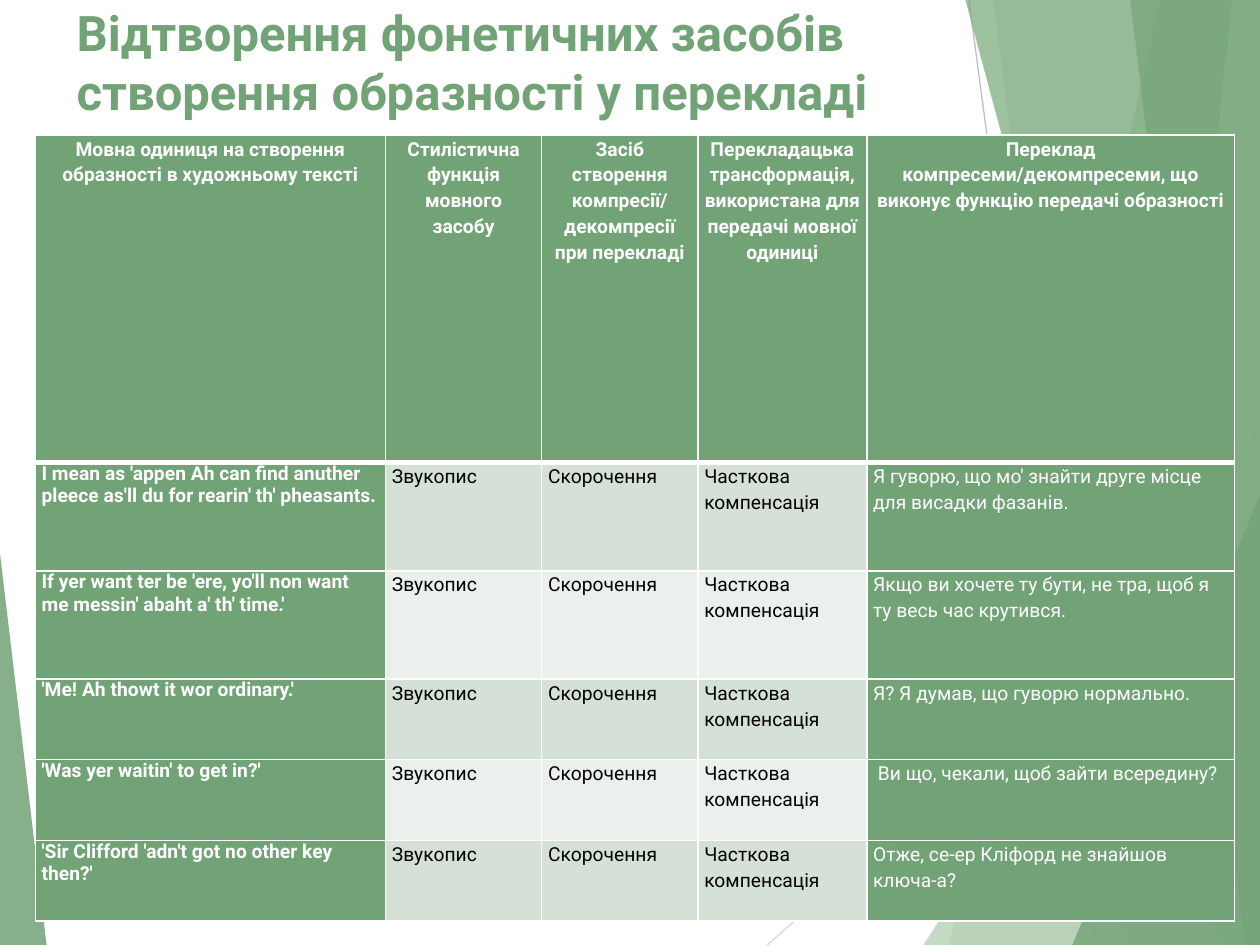
from dataclasses import dataclass

import pptx
import pptx.dml.color
import pptx.enum.shapes
import pptx.enum.text
import pptx.oxml
import pptx.oxml.ns
import pptx.util
from pptx.util import Inches

FONT = "Roboto"
COLORS = {
    "green": "72A376", "leaf": "76A776", "sage": "B0CCB0", "mint": "AAC8AD",
    "band": "D5E0D6", "pale": "EBF0EC", "white": "FFFFFF", "black": "000000",
    "gray": "BFBFBF", "light": "D9D9D9",
}
WIDTHS = [2.78, 1.24, 1.24, 1.34, 2.92]
HEIGHTS = [2.6, 0.86, 0.86, 0.64, 0.64, 0.64]
HEADS = [
    "Мовна одиниця на створення образності в художньому тексті",
    "Стилістична функція\nмовного засобу",
    "Засіб створення компресії/\nдекомпресії при перекладі",
    "Перекладацька трансформація, використана для передачі мовної одиниці",
    "Переклад компресеми/декомпресеми, що виконує функцію передачі образності",
]
MEANS = ["Звукопис", "Скорочення", "Часткова компенсація"]
PAIRS = [
    ("I mean as 'appen Ah can find anuther pleece as'll du for rearin' th' pheasants.",
     "Я гуворю, що мо' знайти друге місце для висадки фазанів."),
    ("If yer want ter be 'ere, yo'll non want me messin' abaht a' th' time.'",
     "Якщо ви хочете ту бути, не тра, щоб я ту весь час крутився."),
    ("'Me! Ah thowt it wor ordinary.'", "Я? Я думав, що гуворю нормально."),
    ("'Was yer waitin' to get in?'", " Ви що, чекали, щоб зайти всередину?"),
    ("'Sir Clifford 'adn't got no other key then?'",
     "Отже, се-ер Кліфорд не знайшов ключа-а?"),
]


@dataclass
class Ray:
    start: tuple
    end: tuple
    color: str


@dataclass
class Band:
    """A slanted strip that runs from the top to the bottom of the slide."""
    top: float
    base: float
    color: str
    alpha: int


@dataclass
class Wedge:
    """A right triangle standing on the bottom edge."""
    left: float
    top: float
    width: float
    apex: float
    color: str
    alpha: int


RAYS = [Ray((7.69, 0), (8.69, 7.5), "gray"), Ray((10, 4.03), (6.09, 7.5), "light")]
FACETS = [
    Band(9.21, 7.53, "green", 30),
    Band(7.88, 8.87, "green", 20),
    Wedge(7.33, 3.33, 2.67, 1, "sage", 72),
    Band(7.66, 9.68, "leaf", 70),
    Band(9.78, 8.94, "mint", 70),
    Band(8.97, 9.88, "green", 65),
    Wedge(8.51, 3.93, 1.49, 1, "green", 80),
    Wedge(0, 4.39, 0.37, 0, "green", 85),
]


def tint(name: str):
    return pptx.dml.color.RGBColor.from_string(COLORS[name])


def draw_ray(slide, ray: Ray) -> None:
    line = slide.shapes.add_connector(
        pptx.enum.shapes.MSO_CONNECTOR.STRAIGHT,
        *map(Inches, ray.start + ray.end))
    line.line.color.rgb = tint(ray.color)
    line.line.width = pptx.util.Pt(0.75)
    line._element.spPr.append(pptx.oxml.parse_xml(
        f'<a:effectLst {pptx.oxml.ns.nsdecls("a")}/>'))


def draw_facet(slide, facet) -> None:
    if isinstance(facet, Band):
        points = [(10, -0.01), (10, 7.5), (facet.base, 7.5)]
        path = slide.shapes.build_freeform(Inches(facet.top), Inches(-0.01))
        path.add_line_segments([(Inches(x), Inches(y)) for x, y in points])
        shape = path.convert_to_shape()
    else:
        shape = slide.shapes.add_shape(
            pptx.enum.shapes.MSO_SHAPE.ISOSCELES_TRIANGLE,
            Inches(facet.left), Inches(facet.top),
            Inches(facet.width), Inches(7.5 - facet.top))
        shape.adjustments[0] = facet.apex
    shape.shadow.inherit = False
    shape.line.fill.background()
    shape.fill.solid()
    shape.fill.fore_color.rgb = tint(facet.color)
    color = shape._element.spPr.find(".//" + pptx.oxml.ns.qn("a:srgbClr"))
    color.append(pptx.oxml.parse_xml(
        f'<a:alpha {pptx.oxml.ns.nsdecls("a")} val="{facet.alpha * 1000}"/>'))


def style(frame, size: float, color: str, bold: bool) -> None:
    for para in frame.paragraphs:
        for run in para.runs:
            run.font.name = FONT
            run.font.size = pptx.util.Pt(size)
            run.font.bold = bold
            run.font.color.rgb = tint(color)


def draw_title(slide) -> None:
    box = slide.shapes.add_textbox(
        Inches(0.51), Inches(-0.03), Inches(7.05), Inches(1.44))
    frame = box.text_frame
    frame.word_wrap = True
    frame.vertical_anchor = pptx.enum.text.MSO_ANCHOR.TOP
    frame.text = "Відтворення фонетичних засобів створення образності у перекладі"
    style(frame, 28, "green", True)


def edge_cell(cell, row: int) -> None:
    props = cell._tc.get_or_add_tcPr()
    sides = {"L": 1, "R": 1, "T": 3 if row == 1 else 1, "B": 3 if row == 0 else 1}
    for spot, (side, width) in enumerate(sides.items()):
        props.insert(spot, pptx.oxml.parse_xml(
            f'<a:ln{side} {pptx.oxml.ns.nsdecls("a")} w="{width * 12700}">'
            f'<a:solidFill><a:srgbClr val="{COLORS["white"]}"/></a:solidFill>'
            f'</a:ln{side}>'))


def fill_cell(cell, text: str, row: int, col: int) -> None:
    head, inner = row == 0, row > 0 and 0 < col < len(WIDTHS) - 1
    cell.margin_left = cell.margin_right = Inches(0.05)
    cell.margin_top = cell.margin_bottom = 0
    cell.fill.solid()
    shade = ("band" if row % 2 else "pale") if inner else "green"
    cell.fill.fore_color.rgb = tint(shade)
    cell.text_frame.text = text
    style(cell.text_frame, 11, "black" if inner else "white", head or col == 0)
    for para in cell.text_frame.paragraphs:
        if head:
            para.alignment = pptx.enum.text.PP_ALIGN.CENTER
        if head or col > 0:
            para.line_spacing = 1.15
    edge_cell(cell, row)


def draw_table(slide) -> None:
    rows = [HEADS] + [[speech, *MEANS, version] for speech, version in PAIRS]
    table = slide.shapes.add_table(
        len(rows), len(WIDTHS), Inches(0.28), Inches(1.07),
        Inches(sum(WIDTHS)), Inches(sum(HEIGHTS))).table
    for col, width in enumerate(WIDTHS):
        table.columns[col].width = Inches(width)
    for row, (height, texts) in enumerate(zip(HEIGHTS, rows)):
        table.rows[row].height = Inches(height)
        for col, text in enumerate(texts):
            fill_cell(table.cell(row, col), text, row, col)


def main() -> None:
    deck = pptx.Presentation()
    deck.slide_width, deck.slide_height = Inches(10), Inches(7.5)
    slide = deck.slides.add_slide(deck.slide_layouts[6])

    # Backdrop
    for ray in RAYS:
        draw_ray(slide, ray)
    for facet in FACETS:
        draw_facet(slide, facet)

    # Content
    draw_title(slide)
    draw_table(slide)
    deck.save("out.pptx")


if __name__ == "__main__":
    main()
